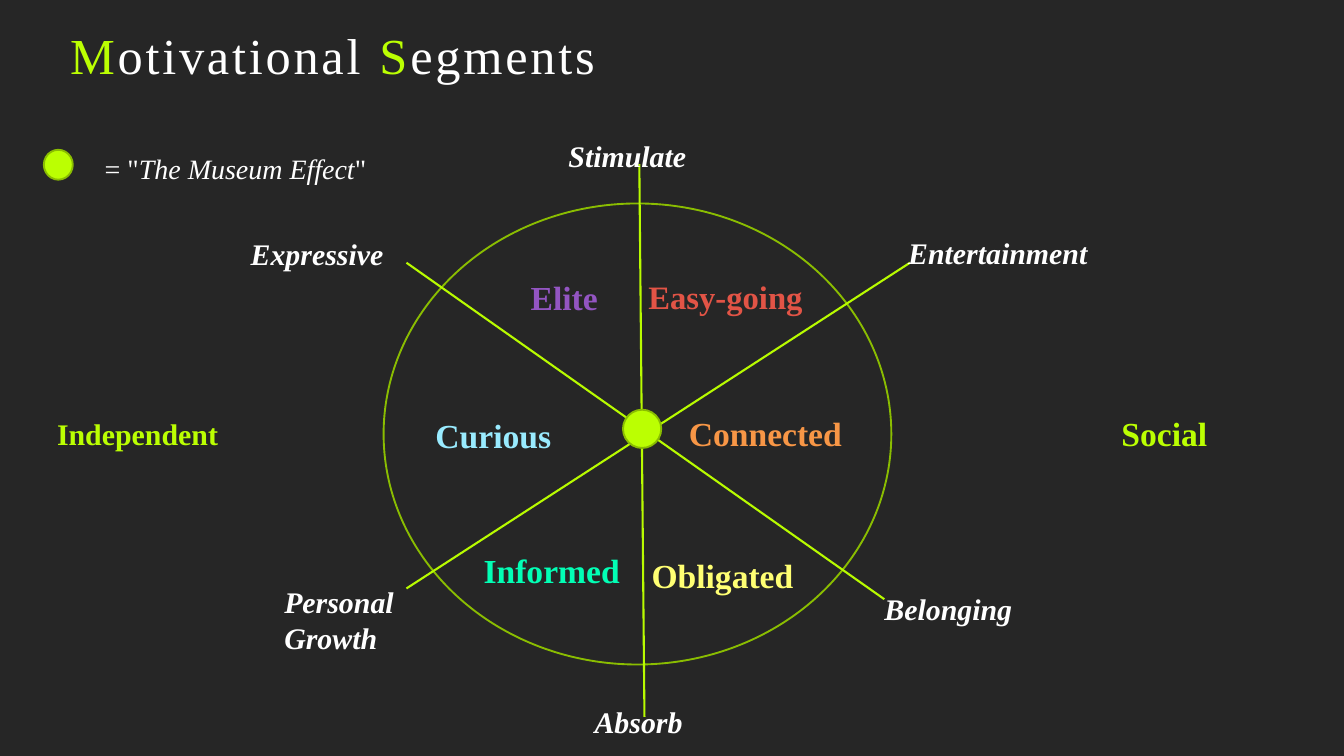
from pptx import Presentation
from pptx.dml.color import RGBColor as RGB
from pptx.enum.shapes import MSO_CONNECTOR as LINE, MSO_SHAPE as SHAPE
from pptx.enum.text import MSO_ANCHOR as ANCHOR, MSO_AUTO_SIZE as AUTO, PP_ALIGN as ALIGN
from pptx.oxml.ns import qn
from pptx.util import Pt
from lxml import etree

DARK = RGB(0x26, 0x26, 0x26)
WHITE = RGB(0xFF, 0xFF, 0xFF)
LIME = RGB(0xBB, 0xFF, 0x02)
SPOKE = RGB(0xB8, 0xFB, 0x00)
OLIVE = RGB(0x8A, 0xBD, 0x01)
PURPLE = RGB(0x93, 0x55, 0xC2)
RED = RGB(0xE2, 0x54, 0x46)
ORANGE = RGB(0xF7, 0x96, 0x46)
YELLOW = RGB(0xFF, 0xFF, 0x73)
MINT = RGB(0x02, 0xFF, 0xB5)
SKY = RGB(0x99, 0xEB, 0xFF)
FACE = "Times New Roman"


def add_run(para, text, color, size, **form):
    run = para.add_run()
    run.text = text
    run.font.color.rgb = color
    for key, value in {"name": FACE, "size": Pt(size), **form}.items():
        setattr(run.font, key, value)
    return run


def add_text(slide, x, y, w, h=46):
    frame = slide.shapes.add_textbox(Pt(x), Pt(y), Pt(w), Pt(h)).text_frame
    frame.word_wrap = True
    return frame.paragraphs[0]


def add_oval(slide, x, y, w, h, fill=None):
    oval = slide.shapes.add_shape(SHAPE.OVAL, Pt(x), Pt(y), Pt(w), Pt(h))
    oval.shadow.inherit = False
    if fill is None:
        oval.fill.background()
    else:
        oval.fill.solid()
        oval.fill.fore_color.rgb = fill
    oval.line.color.rgb = OLIVE
    oval.line.width = Pt(2)


def add_spoke(slide, x1, y1, x2, y2):
    spoke = slide.shapes.add_connector(LINE.STRAIGHT, Pt(x1), Pt(y1), Pt(x2), Pt(y2))
    spoke.line.color.rgb = SPOKE
    spoke.line.width = Pt(2.25)
    etree.SubElement(spoke._element.spPr, qn("a:effectLst"))


def add_title(slide, x, y, w, h):
    title = slide.shapes.title
    place = {"left": x, "top": y, "width": w, "height": h}
    for key, value in place.items():
        setattr(title, key, Pt(value))
    frame = title.text_frame
    form = {"auto_size": AUTO.NONE, "vertical_anchor": ANCHOR.BOTTOM, "word_wrap": True,
            "margin_left": Pt(13), "margin_right": Pt(13),
            "margin_top": Pt(6.5), "margin_bottom": Pt(6.5)}
    for key, value in form.items():
        setattr(frame, key, value)
    para = frame.paragraphs[0]
    para.alignment = ALIGN.LEFT
    for text, color in (("M", LIME), ("otivational ", WHITE), ("S", LIME), ("egments", WHITE)):
        run = add_run(para, text, color, 54)
        run._r.get_or_add_rPr().set("spc", "300")


def add_key(slide, x, y, w, h):
    add_oval(slide, x, y + 2, 31, h - 12, LIME)
    para = add_text(slide, x + 58, y, w - 58, h)
    for text, slant in (('= "', False), ("The Museum Effect", True), ('"', False)):
        add_run(para, text, WHITE, 30, italic=slant)


def add_wheel(slide, x, y, w, h):
    add_oval(slide, x, y, w, h)

    # Three lines through the hub
    for x1, y1, x2, y2 in ((274, -42, 279.5, 550), (24.5, 63.5, 536.5, 424),
                           (564, 63.5, 24.5, 412.5)):
        add_spoke(slide, x + x1, y + y1, x + x2, y + y2)
    add_oval(slide, x + 256.5, y + 221, 41, 41, LIME)

    # Segment names inside the wheel
    for text, color, size, dx, dy, wide in (
            ("Elite", PURPLE, 36, 150.5, 75, 130),
            ("Easy-going", RED, 35, 276.5, 75, 215),
            ("Connected", ORANGE, 36, 320, 221, 216),
            ("Obligated", YELLOW, 36, 280, 373, 181),
            ("Informed", MINT, 36, 100, 368, 180),
            ("Curious", SKY, 36, 48.5, 222.5, 166)):
        para = add_text(slide, x + dx, y + dy, wide, 51)
        add_run(para, text, color, size, bold=True)

    # Motives at the ends of the lines
    for text, dx, dy, wide in (
            ("Stimulate", 191, -74, 216), ("Entertainment", 555, 29.5, 242),
            ("Belonging", 529.5, 411.5, 216), ("Absorb", 219, 532, 161),
            ("Personal Growth", -113.5, 404, 216), ("Expressive", -149.5, 31, 216)):
        para = add_text(slide, x + dx, y + dy, wide)
        add_run(para, text, WHITE, 32, bold=True, italic=True)


def add_side(slide, x, y, w, h, text, size):
    add_run(add_text(slide, x, y, w, h), text, LIME, size, bold=True)


def main():
    deck = Presentation()
    deck.slide_width, deck.slide_height = Pt(1440), Pt(810)
    slide = deck.slides.add_slide(deck.slide_layouts[5])
    slide.background.fill.solid()
    slide.background.fill.fore_color.rgb = DARK

    add_title(slide, 62, 0, 1296, 97)
    add_key(slide, 47, 158.5, 486, 44)
    add_wheel(slide, 411, 218, 544, 494)
    add_side(slide, 54, 441.5, 287, 46, "Independent", 32)
    add_side(slide, 1194.5, 439, 150, 51, "Social", 36)
    deck.save("out.pptx")


if __name__ == "__main__":
    main()
